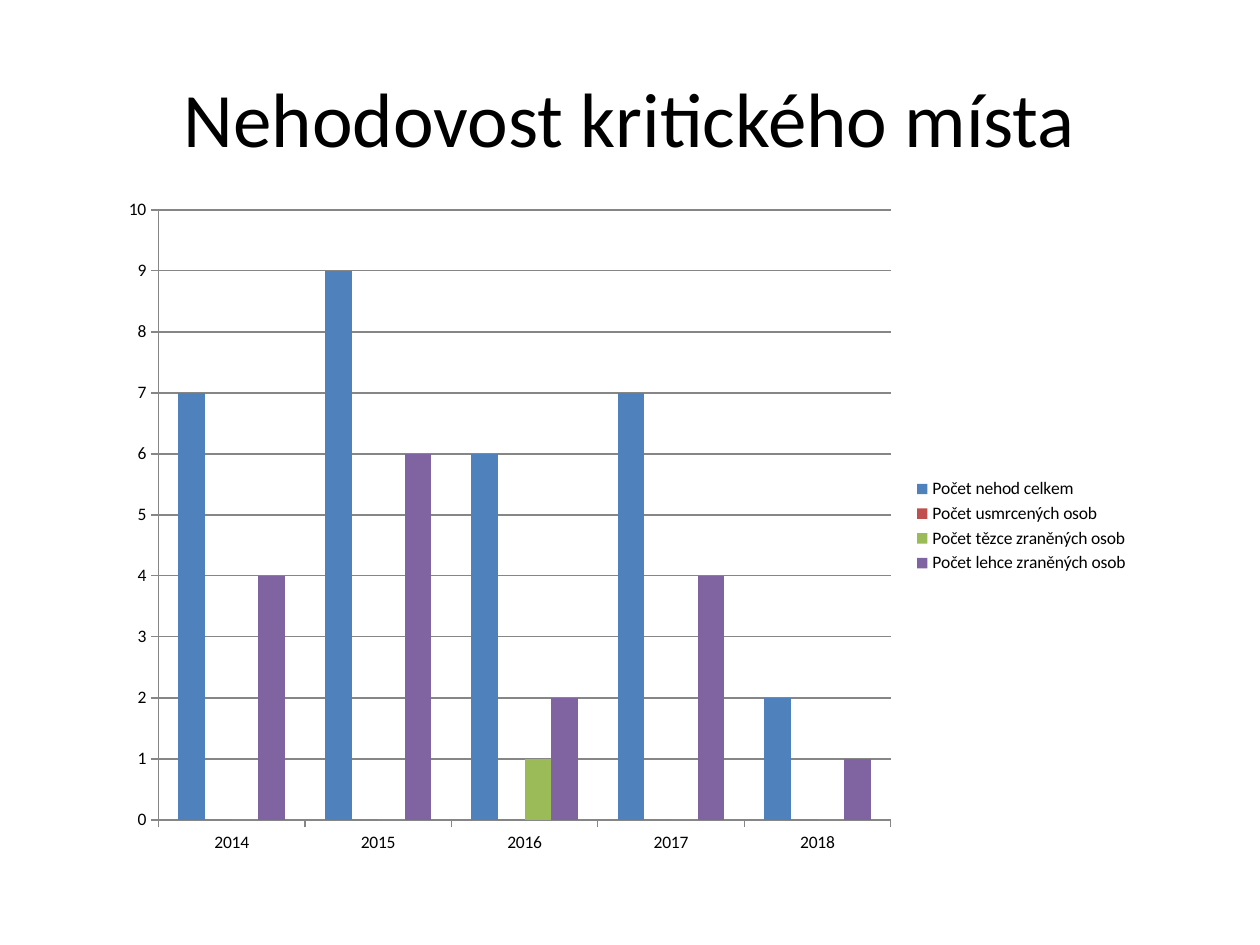
from pptx import Presentation
from pptx.chart.data import CategoryChartData
from pptx.dml.color import RGBColor
from pptx.enum.chart import XL_CHART_TYPE, XL_LEGEND_POSITION, XL_TICK_MARK
from pptx.enum.text import MSO_ANCHOR, PP_ALIGN
from pptx.util import Cm, Pt

TITLE = "Nehodovost kritického místa"
YEARS = ["2014", "2015", "2016", "2017", "2018"]
SERIES = [
    ("Počet nehod celkem", (7, 9, 6, 7, 2), "4F81BD"),
    ("Počet usmrcených osob", (0, 0, 0, 0, 0), "C0504D"),
    ("Počet tězce zraněných osob", (0, 0, 1, 0, 0), "9BBB59"),
    ("Počet lehce zraněných osob", (4, 6, 2, 4, 1), "8064A2"),
]
THEME = {"font": "Calibri", "text": "000000", "line": "868686",
         "background": "FFFFFF", "title_size": 44, "chart_size": 10}


def color(name):
    return RGBColor.from_string(THEME[name])


def format_font(font, size):
    font.name = THEME["font"]
    font.size = Pt(size)
    font.bold = False
    font.color.rgb = color("text")


def set_text(sp, text, size, align=PP_ALIGN.CENTER, anchor=MSO_ANCHOR.MIDDLE):
    tf = sp.text_frame
    tf.word_wrap = True
    tf.vertical_anchor = anchor
    p = tf.paragraphs[0]
    p.alignment = align
    r = p.add_run()
    r.text = text
    format_font(r.font, size)


def format_line(line):
    line.color.rgb = color("line")
    line.width = Pt(0.75)


def add_accident_chart(s, left, top, width, height):
    data = CategoryChartData(number_format="General")
    data.categories = YEARS
    for name, values, _ in SERIES:
        data.add_series(name, values)
    chart = s.shapes.add_chart(XL_CHART_TYPE.COLUMN_CLUSTERED,
                               left, top, width, height, data).chart
    format_font(chart.font, THEME["chart_size"])
    chart.has_title = False
    chart.has_legend = True
    chart.legend.position = XL_LEGEND_POSITION.RIGHT
    chart.legend.include_in_layout = False

    plot = chart.plots[0]
    plot.gap_width = 150
    plot.overlap = 0
    plot.vary_by_categories = False
    for series, (_, _, fill) in zip(plot.series, SERIES):
        series.format.fill.solid()
        series.format.fill.fore_color.rgb = RGBColor.from_string(fill)

    for axis in (chart.category_axis, chart.value_axis):
        axis.major_tick_mark = XL_TICK_MARK.OUTSIDE
        axis.minor_tick_mark = XL_TICK_MARK.NONE
        format_line(axis.format.line)
    axis = chart.value_axis
    axis.minimum_scale, axis.maximum_scale, axis.major_unit = 0, 10, 1
    axis.has_major_gridlines = True
    format_line(axis.major_gridlines.format.line)


def main():
    prs = Presentation()
    prs.slide_width, prs.slide_height = Cm(25.4), Cm(19.05)
    s = prs.slides.add_slide(prs.slide_layouts[5])
    s.background.fill.solid()
    s.background.fill.fore_color.rgb = color("background")

    title = s.shapes.title
    title.left, title.top = Cm(1.27), Cm(0.76)
    title.width, title.height = Cm(22.86), Cm(3.18)
    set_text(title, TITLE, THEME["title_size"])

    add_accident_chart(s, Cm(2.18), Cm(3.76), Cm(20.83), Cm(13.69))
    prs.save("out.pptx")


if __name__ == "__main__":
    main()
